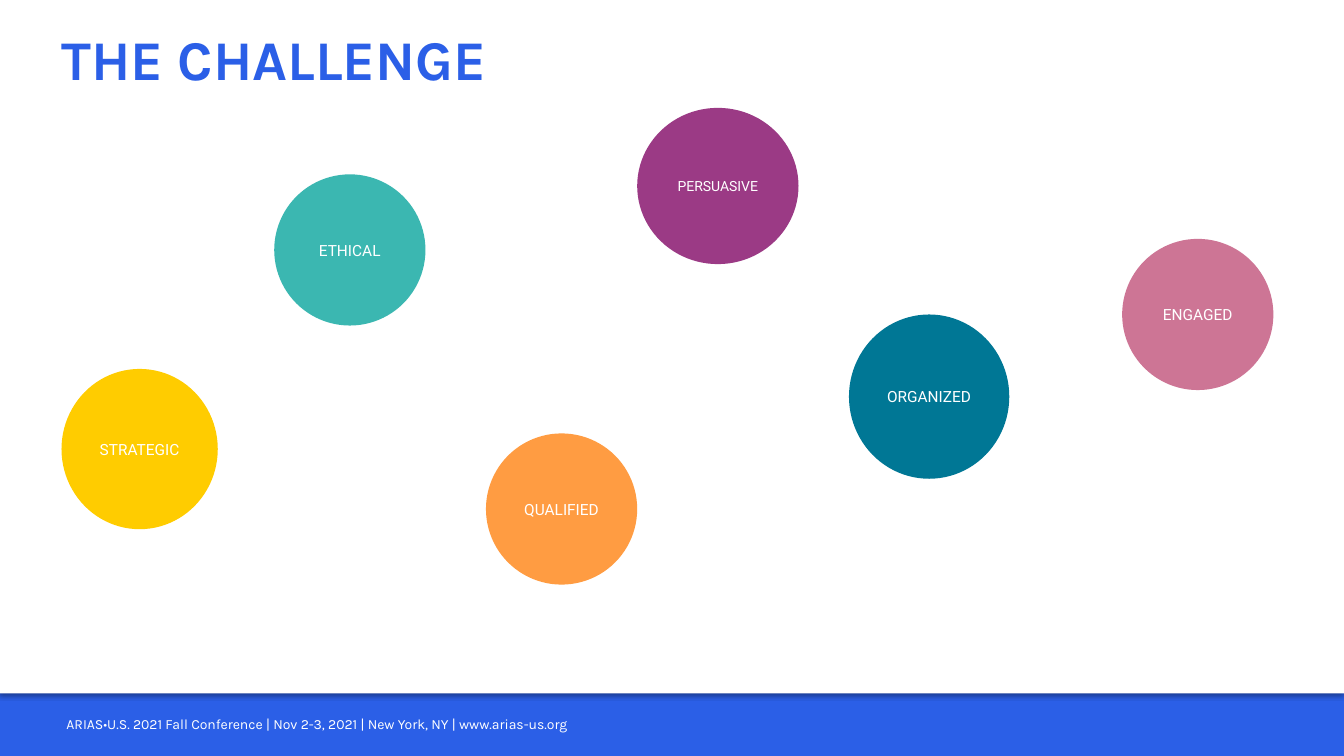
from lxml import etree
from pptx import Presentation
from pptx.dml.color import RGBColor
from pptx.enum.shapes import MSO_SHAPE
from pptx.enum.text import MSO_ANCHOR, PP_ALIGN
from pptx.oxml.ns import qn
from pptx.util import Inches, Pt

RECT, DISC = MSO_SHAPE.RECTANGLE, MSO_SHAPE.FLOWCHART_CONNECTOR
TOP, MIDDLE = MSO_ANCHOR.TOP, MSO_ANCHOR.MIDDLE
LEFT, CENTER = PP_ALIGN.LEFT, PP_ALIGN.CENTER

WIDTH, HEIGHT = 13.33, 7.5
PANEL = 6.88
HEAD, BODY = "Karla", "Roboto"
COLORS = {
    "blue": "2B5FE7", "white": "FFFFFF", "black": "000000",
    "teal": "3BB7B1", "yellow": "FFCC00", "pink": "CD7595",
    "purple": "9B3A85", "petrol": "007795", "orange": "FF9C42",
}
# label, color, left, top, width, height, text size
TRAITS = [
    ("STRATEGIC", "yellow", 0.61, 3.66, 1.55, 1.59, 11),
    ("ETHICAL", "teal", 2.72, 1.73, 1.5, 1.5, 11),
    ("QUALIFIED", "orange", 4.82, 4.3, 1.5, 1.5, 11),
    ("PERSUASIVE", "purple", 6.32, 1.07, 1.6, 1.55, 10),
    ("ORGANIZED", "petrol", 8.42, 3.12, 1.59, 1.63, 11),
    ("ENGAGED", "pink", 11.13, 2.37, 1.5, 1.5, 11),
]


def rgb(name):
    return RGBColor.from_string(COLORS[name])


def write(frame, text, font=BODY, size=11, color="white", bold=False,
          align=LEFT, anchor=TOP):
    frame.word_wrap = True
    frame.vertical_anchor = anchor
    line = frame.paragraphs[0]
    line.alignment = align
    run = line.add_run()
    run.text = text
    run.font.name = font
    run.font.size = Pt(size)
    run.font.bold = bold
    run.font.color.rgb = rgb(color)


class Deck:
    def __init__(self):
        self.prs = Presentation()
        self.prs.slide_width = Inches(WIDTH)
        self.prs.slide_height = Inches(HEIGHT)
        self.slide = self.prs.slides.add_slide(self.prs.slide_layouts[6])

    def shape(self, kind, color, *box):
        item = self.slide.shapes.add_shape(kind, *map(Inches, box))
        item.shadow.inherit = False
        item.fill.solid()
        item.fill.fore_color.rgb = rgb(color)
        item.line.fill.background()
        return item

    def shade(self, item):
        """Cast a soft shadow straight down."""
        effects = item.element.spPr.find(qn("a:effectLst"))
        outer = etree.SubElement(effects, qn("a:outerShdw"), blurRad=str(Pt(3)),
                                 dist=str(Pt(1.8)), dir="5400000", rotWithShape="0")
        tint = etree.SubElement(outer, qn("a:srgbClr"), val=COLORS["black"])
        etree.SubElement(tint, qn("a:alpha"), val="35000")

    def text(self, words, *box, **style):
        frame = self.slide.shapes.add_textbox(*map(Inches, box)).text_frame
        frame.margin_left = frame.margin_right = Inches(0.05)
        frame.margin_top = frame.margin_bottom = Inches(0.05)
        write(frame, words, font=HEAD, **style)

    def disc(self, label, color, *box, size):
        item = self.shape(DISC, color, *box)
        write(item.text_frame, label, size=size, align=CENTER, anchor=MIDDLE)


def main():
    deck = Deck()
    deck.shape(RECT, "blue", 0, 0, WIDTH, HEIGHT)
    deck.shade(deck.shape(RECT, "white", 0, 0, WIDTH, PANEL))
    deck.text("THE CHALLENGE", 0.56, 0.19, 12.2, 1.02,
              size=40, color="blue", bold=True)
    deck.text("ARIAS•U.S. 2021 Fall Conference | Nov 2-3, 2021 | "
              "New York, NY | www.arias-us.org",
              0.61, 7.05, 5.37, 0.27, size=10, anchor=MIDDLE)
    for label, color, *box, size in TRAITS:
        deck.disc(label, color, *box, size=size)
    deck.prs.save("out.pptx")


if __name__ == "__main__":
    main()
